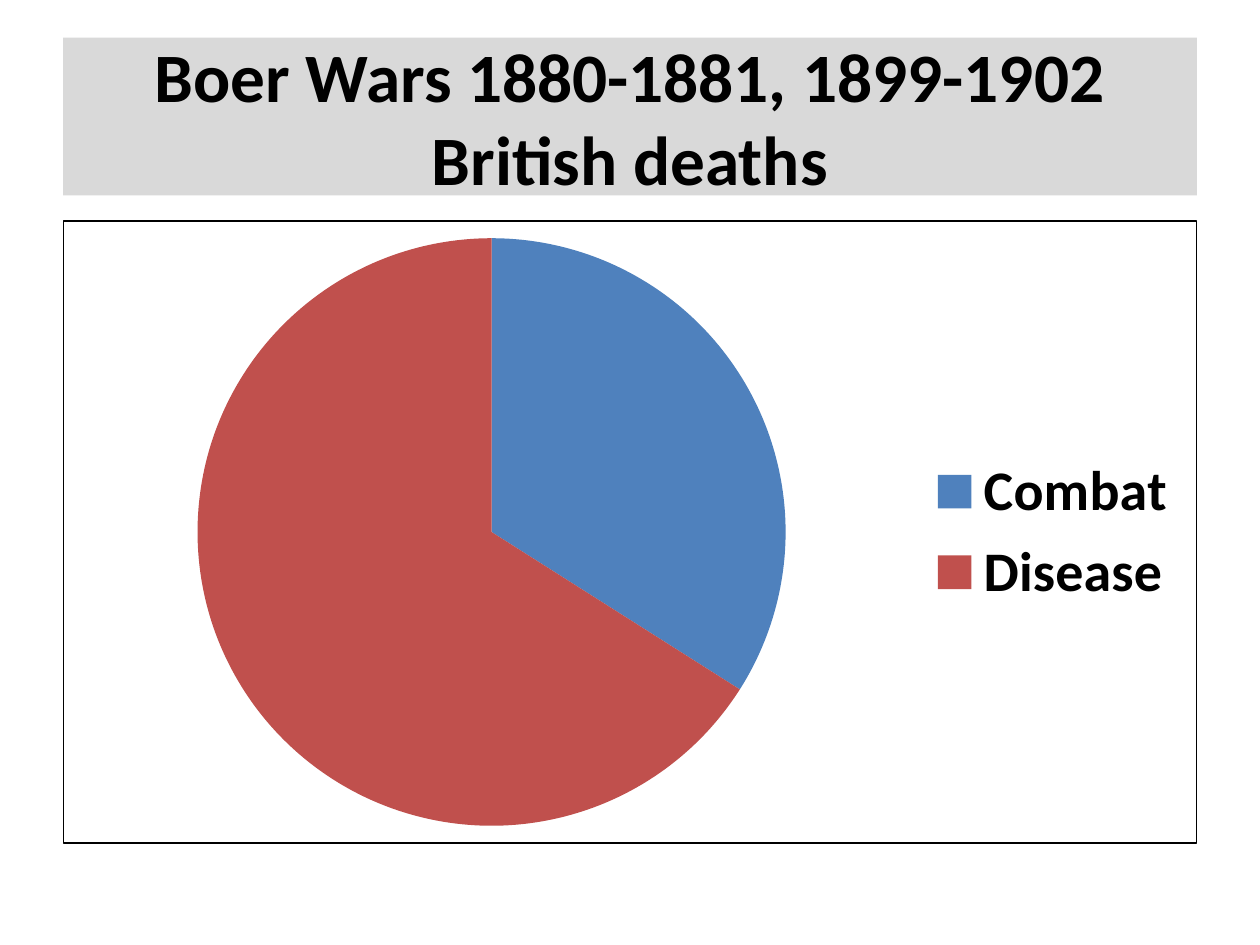
from lxml.etree import SubElement
from pptx import Presentation
from pptx.chart.data import CategoryChartData
from pptx.dml.color import RGBColor
from pptx.enum.chart import XL_CHART_TYPE, XL_LEGEND_POSITION
from pptx.enum.text import MSO_ANCHOR, MSO_AUTO_SIZE, PP_ALIGN
from pptx.oxml import parse_xml
from pptx.oxml.ns import nsdecls, qn
from pptx.util import Cm, Pt

COLORS = {
    "text": "000000",
    "banner": "D9D9D9",
    "Combat": "4F81BD",
    "Disease": "C0504D",
}
DEATHS = {"Combat": 34, "Disease": 66}


class SlideBuilder:
    """Hold the slide style and add each kind of element."""

    font_name = "Calibri"
    left, width = Cm(1.27), Cm(22.86)

    def __init__(self, presentation):
        self.slide = presentation.slides.add_slide(presentation.slide_layouts[5])

    def color(self, name):
        return RGBColor.from_string(COLORS[name])

    def style_font(self, font, size, bold):
        font.name = self.font_name
        font.size = Pt(size)
        font.bold = bold
        font.color.rgb = self.color("text")

    def add_title(self, lines, top, height):
        title = self.slide.shapes.title
        title.left, title.top, title.width, title.height = self.left, top, self.width, height
        title.fill.solid()
        title.fill.fore_color.rgb = self.color("banner")
        frame = title.text_frame
        frame.word_wrap = True
        frame.auto_size = MSO_AUTO_SIZE.NONE
        frame.vertical_anchor = MSO_ANCHOR.MIDDLE
        paragraph = frame.paragraphs[0]
        paragraph.alignment = PP_ALIGN.CENTER
        for index, line in enumerate(lines):
            if index:
                paragraph.add_line_break()
            run = paragraph.add_run()
            run.text = line
            self.style_font(run.font, 39.6, True)

    def add_pie(self, values, top, height):
        data = CategoryChartData()
        data.categories = list(values)
        data.add_series("Series 1", list(values.values()))
        chart = self.slide.shapes.add_chart(
            XL_CHART_TYPE.PIE, self.left, top, self.width, height, data
        ).chart
        self.style_font(chart.font, 18, False)
        chart.has_title = False
        chart.has_legend = True
        chart.legend.position = XL_LEGEND_POSITION.RIGHT
        chart.legend.include_in_layout = False
        self.style_font(chart.legend.font, 32, True)
        plot = chart.plots[0]
        plot.vary_by_categories = True
        for index, category in enumerate(values):
            fill = plot.series[0].points[index].format.fill
            fill.solid()
            fill.fore_color.rgb = self.color(category)
        self.add_border(chart, 0.75)

    def add_border(self, chart, width):
        properties = parse_xml(f"<c:spPr {nsdecls('c', 'a')}/>")
        SubElement(properties, qn("a:noFill"))
        line = SubElement(properties, qn("a:ln"), w=str(Pt(width)))
        fill = SubElement(line, qn("a:solidFill"))
        SubElement(fill, qn("a:srgbClr"), val=COLORS["text"])
        chart.element.find(qn("c:chart")).addnext(properties)


def main():
    presentation = Presentation()
    presentation.slide_width, presentation.slide_height = Cm(25.4), Cm(19.05)
    builder = SlideBuilder(presentation)
    builder.add_title(
        ["Boer Wars 1880-1881, 1899-1902", "British deaths"], Cm(0.76), Cm(3.18)
    )
    builder.add_pie(DEATHS, Cm(4.44), Cm(12.57))
    presentation.save("out.pptx")


if __name__ == "__main__":
    main()
